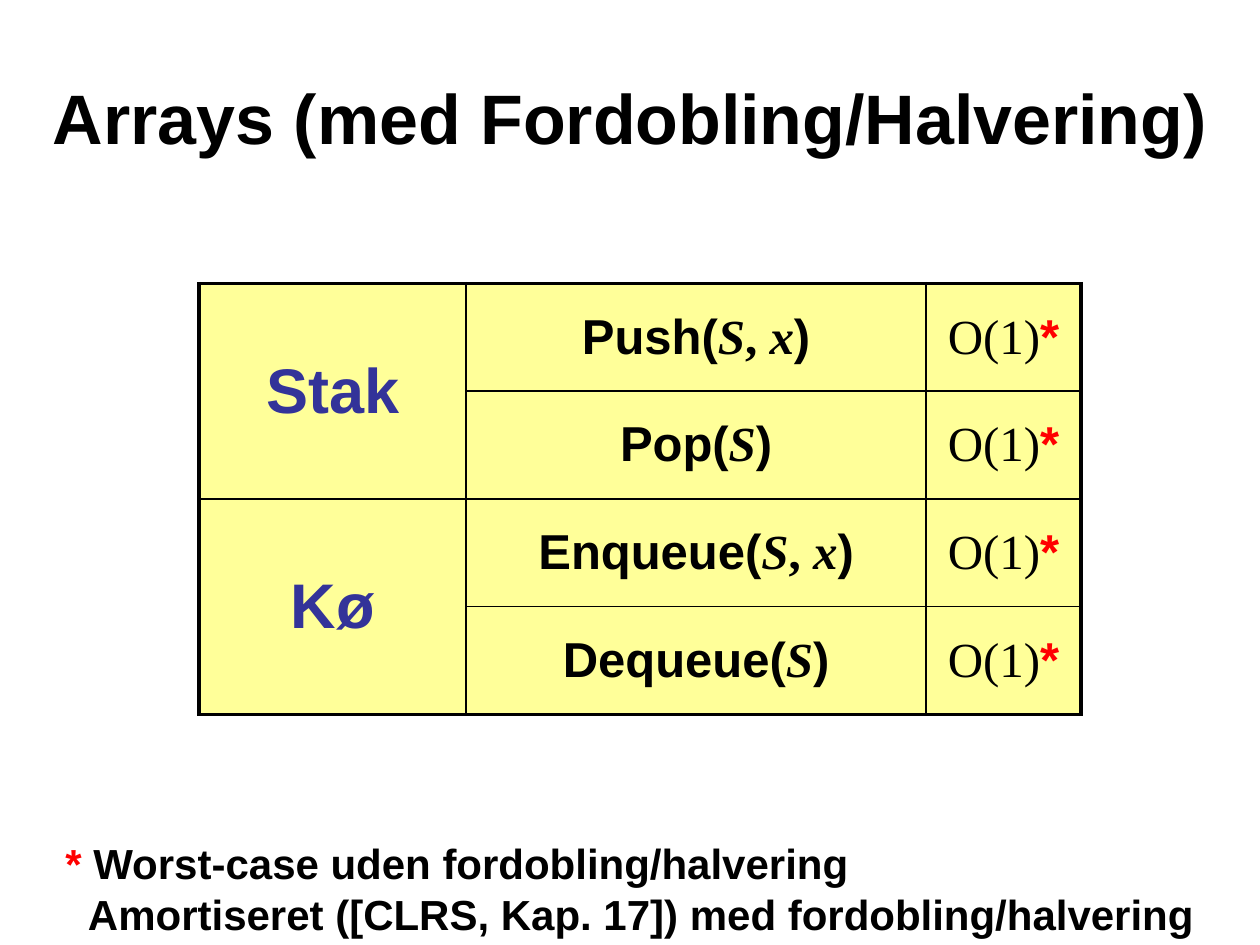
"""Build a slide with the costs of stack and queue operations on arrays."""
from lxml import etree
from pptx import Presentation, util as u
from pptx.dml.color import RGBColor
from pptx.enum import text as t
from pptx.oxml.ns import qn

BLACK = RGBColor(0, 0, 0)
RED = RGBColor(255, 0, 0)
NAVY = RGBColor(0x33, 0x33, 0x99)
YELLOW = RGBColor(0xFF, 0xFF, 0x99)
SANS, SERIF = "Arial", "Times New Roman"
THICK, THIN = 2.25, 1
COLUMNS = (2.12, 3.65, 1.23)
ROW_HEIGHT = 0.855
GROUPS = (
    ("Stak", (("Push", "S", "x"), ("Pop", "S"))),
    ("Kø", (("Enqueue", "S", "x"), ("Dequeue", "S"))),
)


def write(para, text, size=28, font=SANS, color=BLACK, bold=True, italic=False):
    """Add one formatted span to a paragraph."""
    span = para.add_run()
    span.text = text
    style = span.font
    style.size, style.name = u.Pt(size), font
    style.bold, style.italic = bold, italic
    style.color.rgb = color


def add_title(page, text):
    """Move the title placeholder and fill it."""
    box = page.shapes.title
    box.left, box.top = 0, u.Inches(0.3)
    box.width, box.height = u.Inches(10), u.Inches(1.25)
    frame = box.text_frame
    frame.auto_size = t.MSO_AUTO_SIZE.NONE
    frame.vertical_anchor = t.MSO_ANCHOR.MIDDLE
    para = frame.paragraphs[0]
    para.alignment = t.PP_ALIGN.CENTER
    write(para, text, size=40)


def draw_border(cell, side, width):
    """Draw one black edge of a cell."""
    properties = cell._tc.get_or_add_tcPr()
    line = etree.SubElement(properties, qn(f"a:ln{side}"), w=str(u.Pt(width)))
    fill = etree.SubElement(line, qn("a:solidFill"))
    etree.SubElement(fill, qn("a:srgbClr"), val=str(BLACK))


def format_cell(cell, edges):
    """Set borders, fill, margins and alignment of a cell."""
    for side, outer in edges.items():
        draw_border(cell, side, THICK if outer else THIN)
    cell.fill.solid()
    cell.fill.fore_color.rgb = YELLOW
    cell.margin_left = cell.margin_right = u.Inches(0.1)
    cell.margin_top = cell.margin_bottom = 0
    cell.vertical_anchor = t.MSO_ANCHOR.MIDDLE
    cell.text_frame.paragraphs[0].alignment = t.PP_ALIGN.CENTER


def write_call(para, name, arguments):
    """Write an operation with its arguments in serif italics."""
    write(para, f"{name}(")
    for place, argument in enumerate(arguments):
        if place:
            write(para, ", ", font=SERIF)
        write(para, argument, font=SERIF, italic=True)
    write(para, ")")


def add_cost_table(page):
    """Add the table of structures, operations and costs."""
    rows = sum(len(operations) for _, operations in GROUPS)
    table = page.shapes.add_table(
        rows, len(COLUMNS), u.Inches(1.58), u.Inches(2.25),
        u.Inches(sum(COLUMNS)), u.Inches(rows * ROW_HEIGHT)).table
    table.first_row = table.horz_banding = False
    for column, width in zip(table.columns, COLUMNS):
        column.width = u.Inches(width)
    row = 0
    for name, operations in GROUPS:
        last = row + len(operations) - 1
        table.cell(row, 0).merge(table.cell(last, 0))
        for offset, (operation, *arguments) in enumerate(operations):
            for column in range(len(COLUMNS)):
                bottom = last if column == 0 else row + offset
                format_cell(table.cell(row + offset, column), {
                    "L": column == 0, "R": column == len(COLUMNS) - 1,
                    "T": row + offset == 0, "B": bottom == rows - 1})
            call, cost = (table.cell(row + offset, column).text_frame.paragraphs[0]
                          for column in (1, 2))
            write_call(call, operation, arguments)
            write(cost, "O(1)", font=SERIF, bold=False)
            write(cost, "*", color=RED)
        write(table.cell(row, 0).text_frame.paragraphs[0], name, size=36, color=NAVY)
        row = last + 1


def add_footnote(page):
    """Add the two-line note that explains the star."""
    box = page.shapes.add_textbox(
        u.Inches(0.42), u.Inches(6.6), u.Inches(9.17), u.Inches(0.9))
    frame = box.text_frame
    frame.word_wrap = True
    frame.auto_size = t.MSO_AUTO_SIZE.SHAPE_TO_FIT_TEXT
    frame.margin_right = 0
    first, second = frame.paragraphs[0], frame.add_paragraph()
    write(first, "* ", size=24, color=RED)
    write(first, "Worst-case uden fordobling/halvering", size=24)
    second._p.get_or_add_pPr().set("marL", str(u.Inches(0.18)))
    write(second, "Amortiseret ([CLRS, Kap. 17]) med fordobling/halvering", size=24)


def main():
    """Build and save the deck."""
    deck = Presentation()
    deck.slide_width, deck.slide_height = u.Inches(10), u.Inches(7.5)
    page = deck.slides.add_slide(deck.slide_layouts[5])
    add_title(page, "Arrays (med Fordobling/Halvering)")
    add_cost_table(page)
    add_footnote(page)
    deck.save("out.pptx")


if __name__ == "__main__":
    main()
